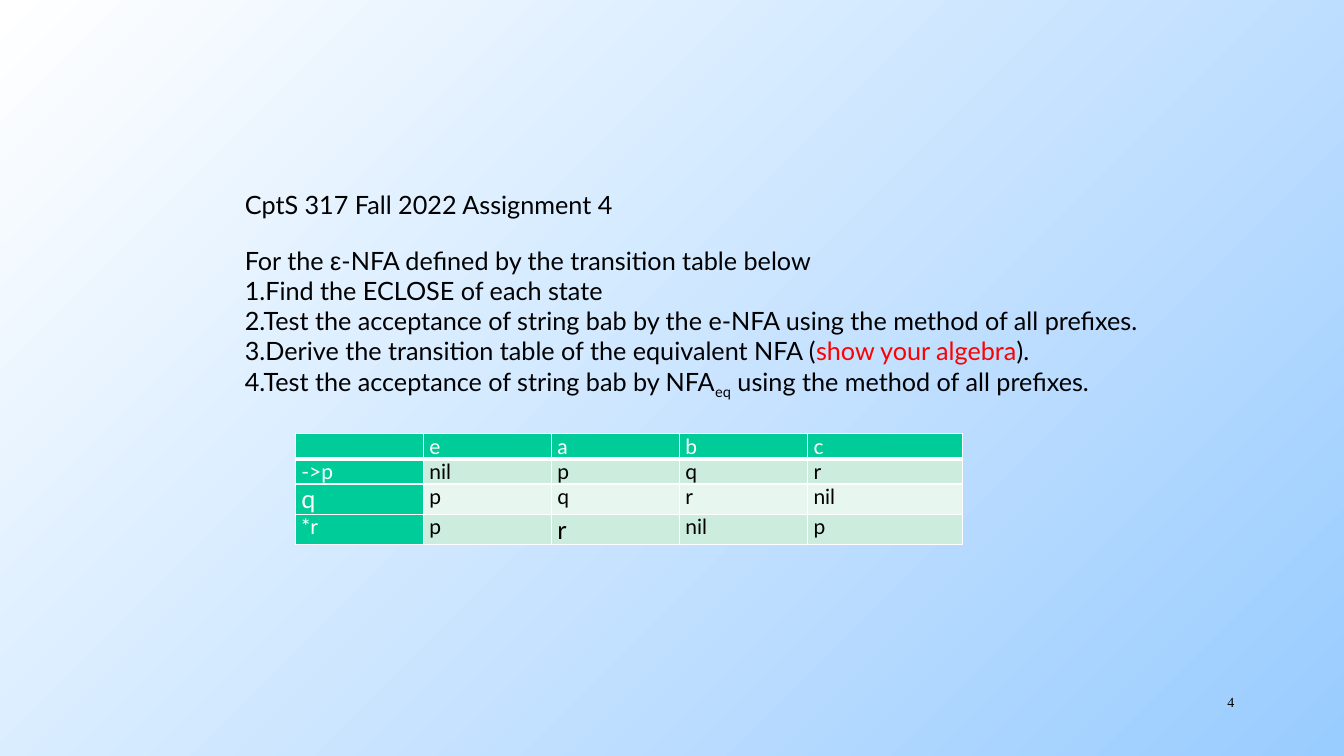
import pptx
import pptx.util
import pptx.dml.color
import pptx.enum.text
import pptx.oxml
import pptx.oxml.ns

PX = 9144
GREEN, WHITE, BLACK, RED = "00CC99", "FFFFFF", "000000", "FF0000"
BANDS = ["CCECDE", "E7F6EF"]
COLUMN_WIDTHS = [127, 127, 127, 127, 154]
ROW_HEIGHTS = [25, 25, 30, 30]
TRANSITIONS = [
    ["", "e", "a", "b", "c"],
    ["->p", "nil", "p", "q", "r"],
    ["q", "p", "q", "r", "nil"],
    ["*r", "p", "r", "nil", "p"],
]
LARGE_CELLS = {(2, 0), (3, 2)}
ASSIGNMENT = [
    [("CptS 317 Fall 2022 Assignment 4", {})],
    [("For the ", {}), ("ε", {"font": "Arial"}),
     ("-NFA defined by the transition table below", {})],
    [("1.Find the ECLOSE of each state", {})],
    [("2.Test the acceptance of string bab by the e-NFA using the method of all prefixes.", {})],
    [("3.Derive the transition table of the equivalent NFA (", {}),
     ("show your algebra", {"color": RED}), (").", {})],
    [("4.Test the acceptance of string bab by NFA", {}), ("eq", {"baseline": -25}),
     (" using the method of all prefixes.", {})],
]


def px(n):
    """Turn hundredths of an inch into EMU."""
    return pptx.util.Emu(n * PX)


def rgb(value):
    """Turn a hex string into a colour."""
    return pptx.dml.color.RGBColor.from_string(value)


def add_run(p, text, size=18, font="Lato", color=BLACK, baseline=0):
    """Append formatted text to a paragraph."""
    r = p.add_run()
    r.text = text
    r.font.size = pptx.util.Pt(size)
    r.font.name = font
    r.font.color.rgb = rgb(color)
    if baseline:
        r.font._element.set("baseline", str(baseline * 1000))


def add_box(s, x, y, w, h):
    """Add a wrapping text box and return its text frame."""
    tf = s.shapes.add_textbox(px(x), px(y), px(w), px(h)).text_frame
    tf.word_wrap = True
    return tf


def set_background(s):
    """Fill the slide with a diagonal white to blue gradient."""
    fill = s.background.fill
    fill.gradient()
    fill.gradient_angle = 315
    for stop, position, color in zip(fill.gradient_stops, (0, 1), (WHITE, "99CCFF")):
        stop.position = position
        stop.color.rgb = rgb(color)


def set_borders(cell, bottom):
    """Draw white cell borders, with the bottom width in points."""
    tcPr = cell._tc.get_or_add_tcPr()
    for side, width in zip("LRTB", (1, 1, 1, bottom)):
        tcPr.append(pptx.oxml.parse_xml(
            f'<a:ln{side} {pptx.oxml.ns.nsdecls("a")} w="{pptx.util.Pt(width)}">'
            f'<a:solidFill><a:srgbClr val="{WHITE}"/></a:solidFill></a:ln{side}>'))


def fill_cell(cell, text, size, color, fill, bottom):
    """Write and format one table cell."""
    cell.margin_left = cell.margin_right = px(6)
    cell.margin_top = cell.margin_bottom = 0
    set_borders(cell, bottom)
    cell.fill.solid()
    cell.fill.fore_color.rgb = rgb(fill)
    p = cell.text_frame.paragraphs[0]
    if text:
        add_run(p, text, size=size, color=color)
    else:
        p._p.get_or_add_endParaRPr().set("sz", str(size * 100))


def add_transition_table(s, x, y):
    """Add the transition table of the automaton."""
    table = s.shapes.add_table(
        len(ROW_HEIGHTS), len(COLUMN_WIDTHS), px(x), px(y),
        px(sum(COLUMN_WIDTHS)), px(sum(ROW_HEIGHTS))).table
    for column, width in zip(table.columns, COLUMN_WIDTHS):
        column.width = px(width)
    for i, states in enumerate(TRANSITIONS):
        table.rows[i].height = px(ROW_HEIGHTS[i])
        for j, text in enumerate(states):
            header = i == 0 or j == 0
            fill_cell(table.cell(i, j), text,
                      size=18 if (i, j) in LARGE_CELLS else 15,
                      color=WHITE if header else BLACK,
                      fill=GREEN if header else BANDS[(i - 1) % 2],
                      bottom=3 if i == 0 else 1)


def add_assignment(s, x, y, w, h):
    """Add the assignment title and its tasks."""
    tf = add_box(s, x, y, w, h)
    tf.margin_top = tf.margin_bottom = 0
    tf.vertical_anchor = pptx.enum.text.MSO_ANCHOR.MIDDLE
    for i, runs in enumerate(ASSIGNMENT):
        p = tf.add_paragraph() if i else tf.paragraphs[0]
        for text, style in runs:
            add_run(p, text, **style)
    tf.paragraphs[0].space_after = pptx.util.Pt(18)


def add_page_number(s, x, y, w, h):
    """Add the right-aligned page number."""
    p = add_box(s, x, y, w, h).paragraphs[0]
    p.alignment = pptx.enum.text.PP_ALIGN.RIGHT
    add_run(p, "4", size=10, font="Times New Roman")


def main():
    """Build and save the slide."""
    prs = pptx.Presentation()
    prs.slide_width, prs.slide_height = px(1333), px(750)
    s = prs.slides.add_slide(prs.slide_layouts[6])
    set_background(s)
    add_page_number(s, 956, 683, 278, 50)
    add_transition_table(s, 293, 430)
    add_assignment(s, 233, 189, 933, 207)
    prs.save("out.pptx")


if __name__ == "__main__":
    main()
